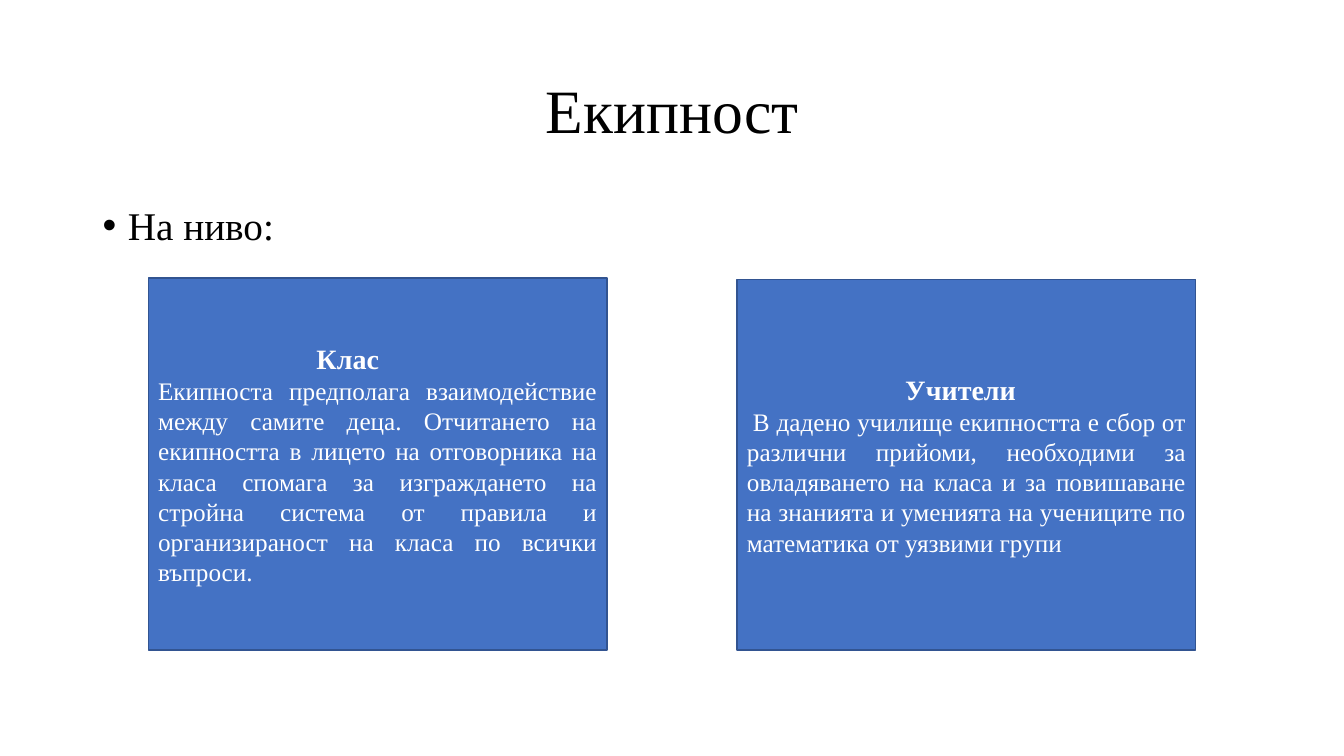
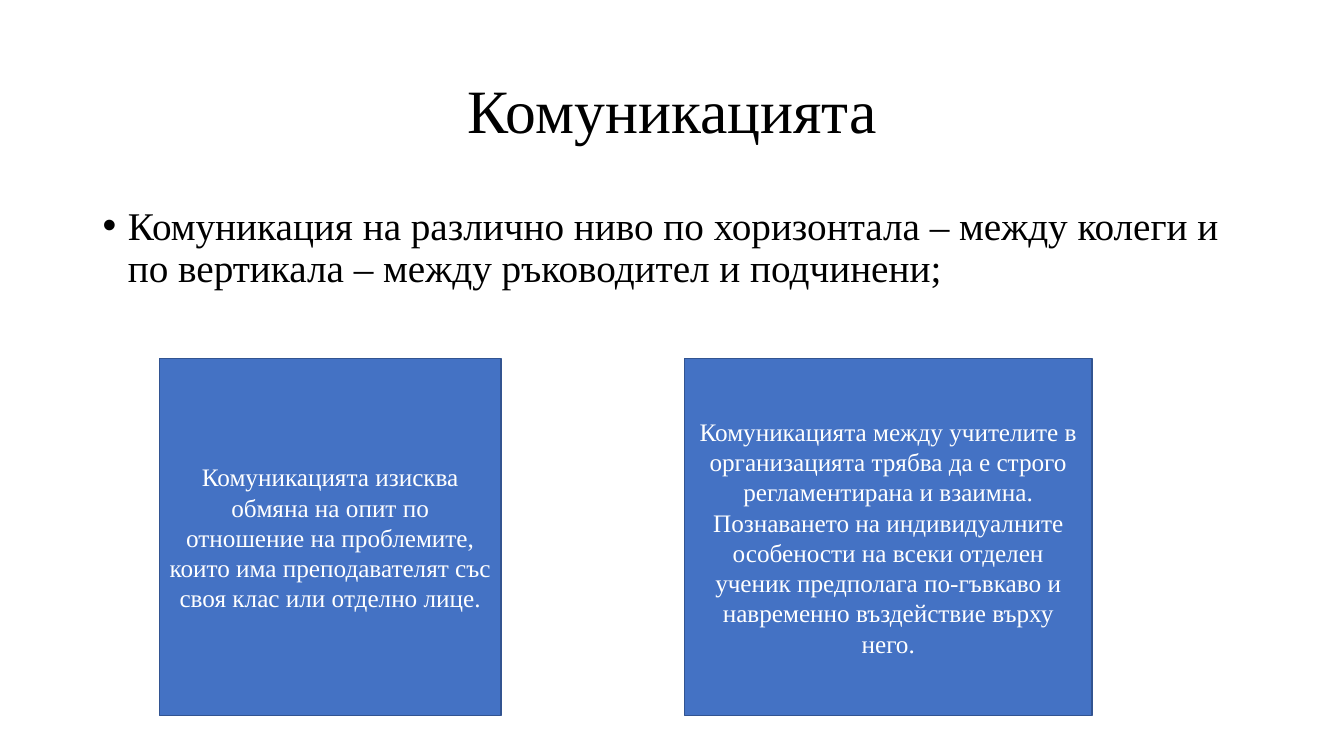
"""Build two slides on teamwork and communication."""
from dataclasses import dataclass

from lxml.etree import SubElement as Sub
from pptx import Presentation as Deck
from pptx.dml.color import RGBColor as Color
from pptx.enum.shapes import MSO_SHAPE as Kind
from pptx.enum.text import MSO_ANCHOR as Anchor, PP_ALIGN as Align
from pptx.oxml.ns import qn
from pptx.util import Inches, Pt

FONT = "Times New Roman"
BLACK, WHITE, BLUE, NAVY = "000000", "FFFFFF", "4472C4", "325491"
LEFT, WIDE = 0.92, 11.5
HEAD_DENT = 1.57


@dataclass
class Box:
    left: float
    top: float
    width: float
    height: float
    text: str
    head: str = ""
    align: Align = Align.CENTER
    dent: float = 0


@dataclass
class Page:
    title: str
    point: str
    boxes: list[Box]


PAGES = [
    Page("Екипност", "На ниво:", [
        Box(1.47, 2.76, 4.55, 3.69,
            "Екипноста предполага взаимодействие между самите деца. "
            "Отчитането на екипността в лицето на отговорника на класа "
            "спомага за изграждането на стройна система от правила и "
            "организираност на класа по всички въпроси.",
            "Клас", Align.JUSTIFY),
        Box(7.31, 2.77, 4.55, 3.68,
            "В дадено училище екипността е сбор от различни прийоми, "
            "необходими за овладяването на класа и за повишаване на "
            "знанията и уменията на учениците по математика от уязвими групи",
            "Учители", Align.JUSTIFY, 0.06),
    ]),
    Page("Комуникацията",
         "Комуникация на различно ниво по хоризонтала – между колеги и "
         "по вертикала – между ръководител и подчинени;", [
             Box(1.58, 3.56, 3.39, 3.54,
                 "Комуникацията изисква обмяна на опит по отношение на "
                 "проблемите, които има преподавателят със своя клас или "
                 "отделно лице."),
             Box(6.79, 3.56, 4.04, 3.54,
                 "Комуникацията между учителите в организацията трябва да е "
                 "строго регламентирана и взаимна. Познаването на "
                 "индивидуалните особености на всеки отделен ученик "
                 "предполага по-гъвкаво и навременно въздействие върху него."),
         ]),
]


def paint(code: str) -> Color:
    return Color.from_string(code)


def style(para, size: float, color: str, align: Align, bold: bool = False) -> None:
    para.alignment = align
    for run in para.runs:
        font = run.font
        font.name, font.size, font.bold = FONT, Pt(size), bold
        font.color.rgb = paint(color)


def indent(para, left: float, first: float) -> None:
    props = para._p.get_or_add_pPr()
    props.set("marL", str(Inches(left)))
    props.set("indent", str(Inches(first)))


def add_text(slide, top: float, high: float, text: str, size: float,
             align: Align, anchor: Anchor):
    frame = slide.shapes.add_textbox(
        Inches(LEFT), Inches(top), Inches(WIDE), Inches(high)).text_frame
    frame.word_wrap = True
    frame.vertical_anchor = anchor
    frame.text = text
    para = frame.paragraphs[0]
    para.line_spacing = 0.9
    style(para, size, BLACK, align)
    return para


def add_point(slide, text: str) -> None:
    para = add_text(slide, 2, 4.76, text, 28, Align.LEFT, Anchor.TOP)
    para.space_before = Pt(10)
    indent(para, 0.25, -0.25)
    props = para._p.get_or_add_pPr()
    Sub(props, qn("a:buFont")).set("typeface", "Arial")
    Sub(props, qn("a:buChar")).set("char", "•")


def add_box(slide, box: Box) -> None:
    shape = slide.shapes.add_shape(
        Kind.RECTANGLE, Inches(box.left), Inches(box.top),
        Inches(box.width), Inches(box.height))
    shape.shadow.inherit = False
    shape.fill.solid()
    shape.fill.fore_color.rgb = paint(BLUE)
    shape.line.color.rgb = paint(NAVY)
    shape.line.width = Pt(1)
    frame = shape.text_frame
    frame.word_wrap = True
    frame.vertical_anchor = Anchor.MIDDLE
    para = frame.paragraphs[0]
    if box.head:
        para.text = box.head
        style(para, 20, WHITE, Align.LEFT, True)
        indent(para, HEAD_DENT, 0)
        para = frame.add_paragraph()
    para.text = box.text
    style(para, 18, WHITE, box.align)
    indent(para, 0, box.dent)


def main() -> None:
    deck = Deck()
    deck.slide_width, deck.slide_height = Inches(13.33), Inches(7.5)
    for page in PAGES:
        slide = deck.slides.add_slide(deck.slide_layouts[6])
        add_text(slide, 0.4, 1.45, page.title, 44, Align.CENTER, Anchor.MIDDLE)
        add_point(slide, page.point)
        for box in page.boxes:
            add_box(slide, box)
    deck.save("out.pptx")


if __name__ == "__main__":
    main()
